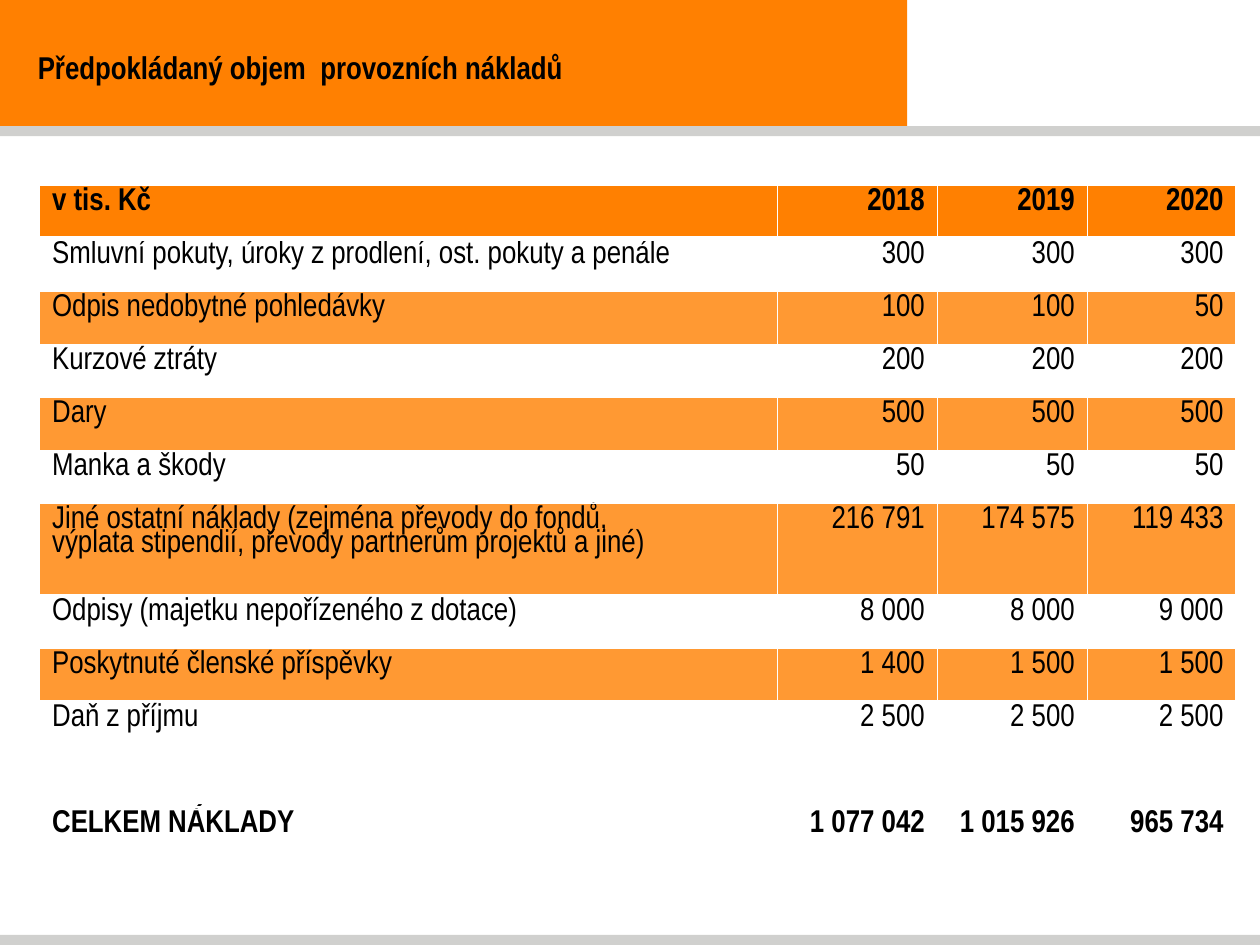
from lxml import etree
from pptx import Presentation
from pptx.dml.color import RGBColor
from pptx.enum import shapes, text
from pptx.oxml import ns
from pptx.util import Pt

FONT = "Arial Narrow"
BLACK, WHITE, GREY = "000000", "FFFFFF", "D0D0CE"
ORANGE, LIGHT_ORANGE = "FF8001", "FF9933"

TITLE = "Předpokládaný objem  provozních nákladů"
COSTS = [
    ("v tis. Kč", "2018", "2019", "2020"),
    ("Smluvní pokuty, úroky z prodlení, ost. pokuty a penále", "300", "300", "300"),
    ("Odpis nedobytné pohledávky", "100", "100", "50"),
    ("Kurzové ztráty", "200", "200", "200"),
    ("Dary", "500", "500", "500"),
    ("Manka a škody", "50", "50", "50"),
    ("Jiné ostatní náklady (zejména převody do fondů,\n"
     "výplata stipendií, převody partnerům projektů a jiné)",
     "216 791", "174 575", "119 433"),
    ("Odpisy (majetku nepořízeného z dotace)", "8 000", "8 000", "9 000"),
    ("Poskytnuté členské příspěvky", "1 400", "1 500", "1 500"),
    ("Daň z příjmu", "2 500", "2 500", "2 500"),
    ("", "", "", ""),
    ("CELKEM NÁKLADY", "1 077 042", "1 015 926", "965 734"),
]
BANDS = [  # left, top, width, height, colour
    (0, 0, 518.4, 72, ORANGE),
    (0, 534.24, 720, 5.76, GREY),
    (0, 72, 720, 5.76, GREY),
]
COLUMN_WIDTHS = [421.7, 91.4, 85.7, 85]
ROW_HEIGHT, TWO_LINE_HEIGHT = 30.3, 52.4
TABLE_LEFT, TABLE_TOP = 22.6, 106


def color(value):
    return RGBColor.from_string(value)


def style_font(font, bold):
    font.name, font.size, font.bold = FONT, Pt(18), bold
    font.color.rgb = color(BLACK)


def set_borders(cell, widths):
    """Draw white cell borders; widths maps a side (L, R, T, B) to points."""
    properties = cell._tc.get_or_add_tcPr()
    for position, (side, width) in enumerate(widths.items()):
        line = etree.Element(ns.qn(f"a:ln{side}"), w=str(Pt(width)))
        fill = etree.SubElement(line, ns.qn("a:solidFill"))
        etree.SubElement(fill, ns.qn("a:srgbClr"), val=WHITE)
        properties.insert(position, line)


def row_fill(row):
    if row == 0:
        return ORANGE
    return LIGHT_ORANGE if row % 2 == 0 and row < 10 else WHITE


def add_bands(slide):
    for left, top, width, height, fill in BANDS:
        band = slide.shapes.add_shape(shapes.MSO_SHAPE.RECTANGLE,
                                      Pt(left), Pt(top), Pt(width), Pt(height))
        band.shadow.inherit = False
        band.fill.solid()
        band.fill.fore_color.rgb = color(fill)
        band.line.fill.background()


def add_cost_table(slide):
    heights = [TWO_LINE_HEIGHT if "\n" in row[0] else ROW_HEIGHT for row in COSTS]
    table = slide.shapes.add_table(
        len(COSTS), len(COLUMN_WIDTHS), Pt(TABLE_LEFT), Pt(TABLE_TOP),
        Pt(sum(COLUMN_WIDTHS)), Pt(sum(heights))).table
    for column, width in zip(table.columns, COLUMN_WIDTHS):
        column.width = Pt(width)
    for r, (values, height) in enumerate(zip(COSTS, heights)):
        table.rows[r].height = Pt(height)
        for c, value in enumerate(values):
            cell = table.cell(r, c)
            cell.text_frame.text = value
            cell.fill.solid()
            cell.fill.fore_color.rgb = color(row_fill(r))
            set_borders(cell, {"L": 1, "R": 1, "T": 3 if r == 1 else 1,
                               "B": 3 if r == 0 else 1})
            for paragraph in cell.text_frame.paragraphs:
                paragraph.line_spacing = 0.8
                paragraph.alignment = text.PP_ALIGN.RIGHT if c else text.PP_ALIGN.LEFT
                style_font(paragraph.font, r in (0, len(COSTS) - 1))
                for run in paragraph.runs:
                    style_font(run.font, r in (0, len(COSTS) - 1))


def add_title(slide):
    title = slide.shapes.title
    title.left, title.top, title.width, title.height = Pt(0), Pt(22.3), Pt(518.4), Pt(32.4)
    frame = title.text_frame
    frame.text = TITLE
    frame.word_wrap = True
    frame.auto_size = text.MSO_AUTO_SIZE.NONE
    frame.vertical_anchor = text.MSO_ANCHOR.MIDDLE
    frame.margin_left = Pt(21.6)
    heading = frame.paragraphs[0]
    heading.alignment = text.PP_ALIGN.JUSTIFY
    style_font(heading.runs[0].font, True)
    # The title comes after the bands so that it stays in front of them.
    slide.shapes._spTree.append(title._element)


def main():
    deck = Presentation()
    deck.slide_width, deck.slide_height = Pt(720), Pt(540)
    slide = deck.slides.add_slide(deck.slide_layouts[5])
    add_bands(slide)
    add_cost_table(slide)
    add_title(slide)
    deck.save("out.pptx")


if __name__ == "__main__":
    main()
